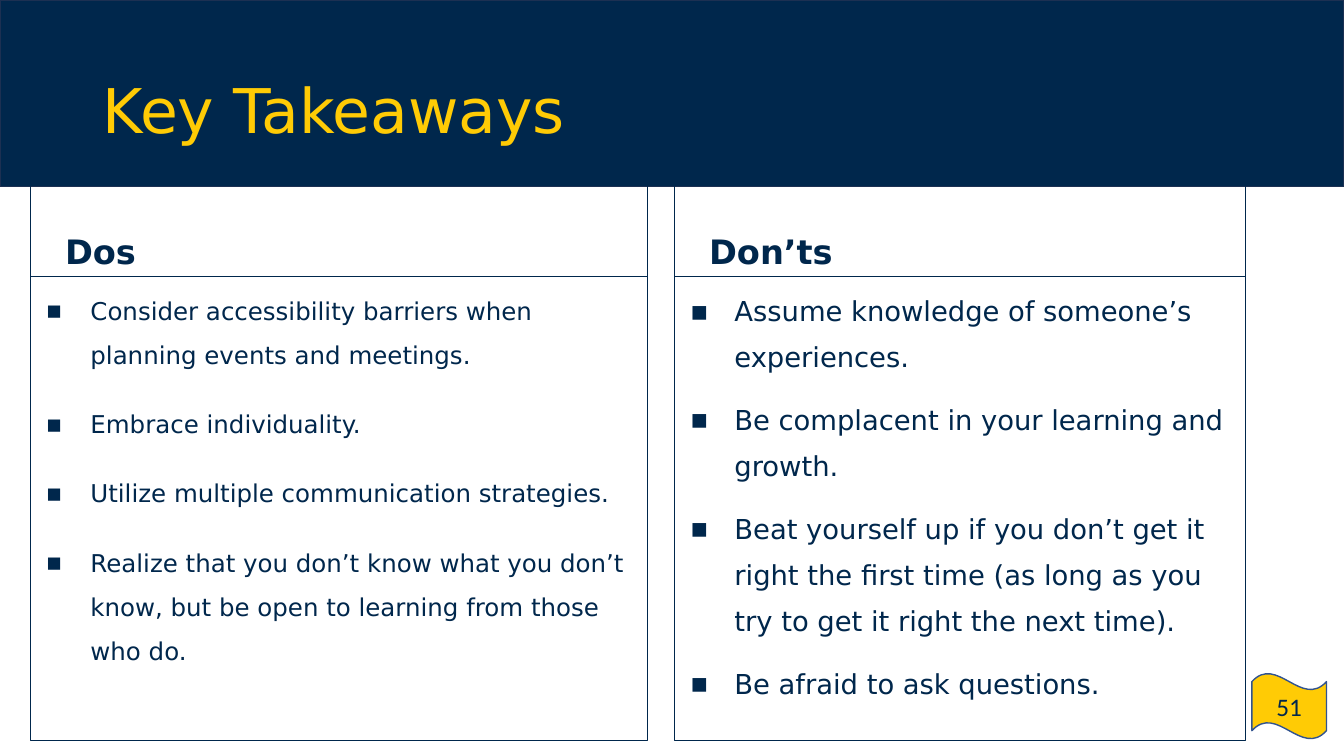
"""Build the Key Takeaways slide with its columns of dos and don'ts."""
from lxml import etree
from pptx import Presentation
from pptx.dml.color import RGBColor
from pptx.enum.shapes import MSO_SHAPE
from pptx.enum.text import MSO_ANCHOR, PP_ALIGN
from pptx.oxml.ns import qn
from pptx.util import Cm, Pt

RECTANGLE, WAVE = MSO_SHAPE.RECTANGLE, MSO_SHAPE.WAVE
TOP, MIDDLE, BOTTOM = MSO_ANCHOR.TOP, MSO_ANCHOR.MIDDLE, MSO_ANCHOR.BOTTOM
LEFT, CENTER = PP_ALIGN.LEFT, PP_ALIGN.CENTER

COLORS = {
    "navy": "00274C",
    "maize": "FFCB05",
    "band line": "1C3052",
    "wave line": "31538F",
}
HEADING_TOP, HEADING_HEIGHT = 4.67, 2.29
BODY_TOP, BODY_HEIGHT = HEADING_TOP + HEADING_HEIGHT, 11.71
COLUMNS = [
    {
        "heading": "Dos", "left": 0.76, "width": 15.57,
        "size": 17.5, "line_spacing": 1.5, "gap": 18,
        "points": [
            "Consider accessibility barriers when planning events and meetings.",
            "Embrace individuality.",
            "Utilize multiple communication strategies.",
            "Realize that you don’t know what you don’t know, but be open to learning from those who do.",
        ],
    },
    {
        "heading": "Don’ts", "left": 16.99, "width": 14.4,
        "size": 19.6, "line_spacing": 1.4, "gap": 12,
        "points": [
            "Assume knowledge of someone’s experiences.",
            "Be complacent in your learning and growth.",
            "Beat yourself up if you don’t get it right the first time (as long as you try to get it right the next time).",
            "Be afraid to ask questions.",
        ],
    },
]


def add_box(kind, left, top, width, height, line, line_width, fill=None):
    """Add an outlined shape, filled when a fill colour is named."""
    shape = slide.shapes.add_shape(kind, Cm(left), Cm(top), Cm(width), Cm(height))
    shape.shadow.inherit = False
    shape.line.color.rgb = RGBColor.from_string(COLORS[line])
    shape.line.width = Pt(line_width)
    if fill:
        shape.fill.solid()
        shape.fill.fore_color.rgb = RGBColor.from_string(COLORS[fill])
    else:
        shape.fill.background()
    return shape


def write(shape, texts, size, color="navy", name="DejaVu Sans", bold=False, anchor=TOP,
          alignment=LEFT, line_spacing=1.0, gap=0, margin=0, indent=0, bullet=None):
    """Write one paragraph for each text, with an optional bullet."""
    frame = shape.text_frame
    frame.word_wrap = True
    frame.vertical_anchor = anchor
    for index, text in enumerate(texts):
        paragraph = frame.add_paragraph() if index else frame.paragraphs[0]
        paragraph.text = text
        paragraph_format = {"alignment": alignment, "line_spacing": line_spacing,
                            "space_before": Pt(gap if index else 0)}
        for attribute, value in paragraph_format.items():
            setattr(paragraph, attribute, value)
        properties = paragraph._p.get_or_add_pPr()
        properties.set("marL", str(Cm(margin)))
        properties.set("indent", str(Cm(indent)))
        if bullet:
            bullet_color = etree.SubElement(properties, qn("a:buClr"))
            etree.SubElement(bullet_color, qn("a:srgbClr"), val=COLORS[color])
            etree.SubElement(properties, qn("a:buFont"), typeface=name)
            etree.SubElement(properties, qn("a:buChar"), char=bullet)
        font_format = {"name": name, "size": Pt(size), "bold": bold}
        for attribute, value in font_format.items():
            setattr(paragraph.font, attribute, value)
        paragraph.font.color.rgb = RGBColor.from_string(COLORS[color])


presentation = Presentation()
presentation.slide_width, presentation.slide_height = Cm(33.87), Cm(19.05)
slide = presentation.slides.add_slide(presentation.slide_layouts[6])

add_box(RECTANGLE, 0, 0, 33.87, 4.7, "band line", 1, "navy")
page_number = add_box(WAVE, 31.55, 16.97, 1.88, 1.65, "wave line", 1, "maize")
write(page_number, ["51"], 18, name="Calibri", anchor=MIDDLE, alignment=CENTER)
title = slide.shapes.add_textbox(Cm(2.34), Cm(1.02), Cm(29.21), Cm(3.68))
write(title, ["Key Takeaways"], 44, "maize", anchor=MIDDLE, line_spacing=0.9)

for column in COLUMNS:
    left, width = column["left"], column["width"]
    heading = add_box(RECTANGLE, left, HEADING_TOP, width, HEADING_HEIGHT, "navy", 0.75)
    write(heading, [column["heading"]], 24, bold=True, anchor=BOTTOM, margin=1.27, indent=-0.64)
    body = add_box(RECTANGLE, left, BODY_TOP, width, BODY_HEIGHT, "navy", 0.75)
    write(body, column["points"], column["size"], line_spacing=column["line_spacing"],
          gap=column["gap"], margin=1.27, indent=-1.12, bullet="▪")

presentation.save("out.pptx")
